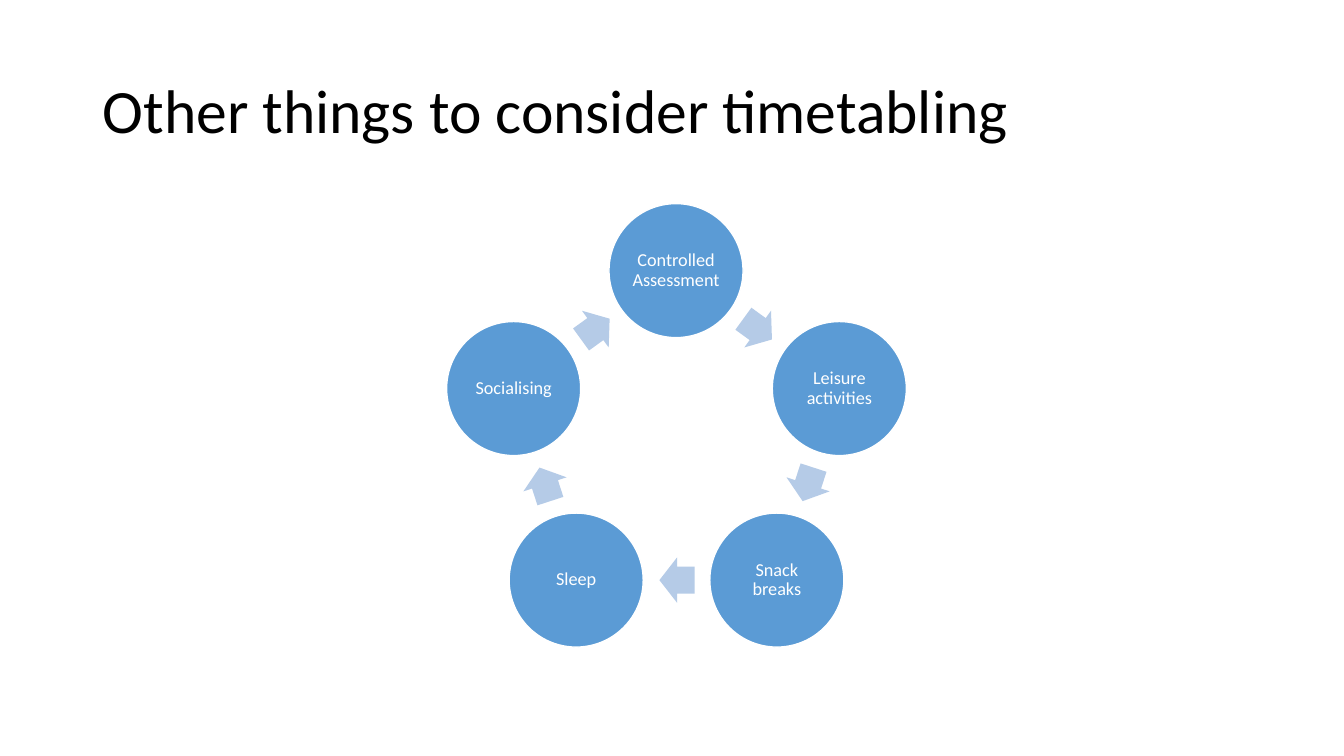
import math

import pptx
import pptx.dml.color
import pptx.enum.shapes
import pptx.enum.text
import pptx.util

PX = 9144  # EMU, 100 px to the inch
SHAPES = pptx.enum.shapes.MSO_SHAPE
ALIGN = pptx.enum.text.PP_ALIGN
MIDDLE = pptx.enum.text.MSO_ANCHOR.MIDDLE


def color(hex_code):
    return pptx.dml.color.RGBColor.from_string(hex_code)


def write(shape, text, size, hex_code, align):
    frame = shape.text_frame
    frame.text = text
    frame.word_wrap = True
    frame.vertical_anchor = MIDDLE
    paragraph = frame.paragraphs[0]
    paragraph.alignment = align
    paragraph.line_spacing = 0.9
    font = paragraph.runs[0].font
    font.name = "Calibri"
    font.size = pptx.util.Pt(size)
    font.color.rgb = color(hex_code)


deck = pptx.Presentation()
deck.slide_width = 1333 * PX
deck.slide_height = 750 * PX
slide = deck.slides.add_slide(deck.slide_layouts[5])

heading = slide.shapes.title
heading.left, heading.top = 92 * PX, 40 * PX
heading.width, heading.height = 1150 * PX, 145 * PX
write(heading, "Other things to consider timetabling", 44, "000000", ALIGN.LEFT)
heading.text_frame.auto_size = pptx.enum.text.MSO_AUTO_SIZE.NONE

activities = ["Controlled Assessment", "Leisure activities", "Snack breaks",
              "Sleep", "Socialising"]
step = 360 / len(activities)
center_x, center_y = 671, 438
ring_radius = 170
arrow_radius = ring_radius * math.cos(math.radians(step / 2))
circle_size = 133
arrow_width, arrow_height = 35, 45

for index, activity in enumerate(activities):
    # Angles run clockwise from the top of the ring
    angle = math.radians(index * step)
    x = round(center_x + ring_radius * math.sin(angle) - circle_size / 2)
    y = round(center_y - ring_radius * math.cos(angle) - circle_size / 2)
    circle = slide.shapes.add_shape(
        SHAPES.OVAL, x * PX, y * PX, circle_size * PX, circle_size * PX)
    circle.shadow.inherit = False
    circle.fill.solid()
    circle.fill.fore_color.rgb = color("5B9BD5")
    circle.line.color.rgb = color("FFFFFF")
    circle.line.width = pptx.util.Pt(1)
    write(circle, activity, 13, "FFFFFF", ALIGN.CENTER)
    label = circle.text_frame
    label.margin_left = label.margin_right = 2 * PX
    label.margin_top = label.margin_bottom = 2 * PX

    # Each arrow sits halfway to the next circle
    heading_angle = (index + 0.5) * step
    angle = math.radians(heading_angle)
    x = round(center_x + arrow_radius * math.sin(angle) - arrow_width / 2)
    y = round(center_y - arrow_radius * math.cos(angle) - arrow_height / 2)
    arrow = slide.shapes.add_shape(
        SHAPES.RIGHT_ARROW, x * PX, y * PX, arrow_width * PX, arrow_height * PX)
    arrow.rotation = heading_angle
    arrow.adjustments[0] = 0.6
    arrow.adjustments[1] = 0.5
    arrow.shadow.inherit = False
    arrow.fill.solid()
    arrow.fill.fore_color.rgb = color("B5CBE7")
    arrow.line.fill.background()

deck.save("out.pptx")
